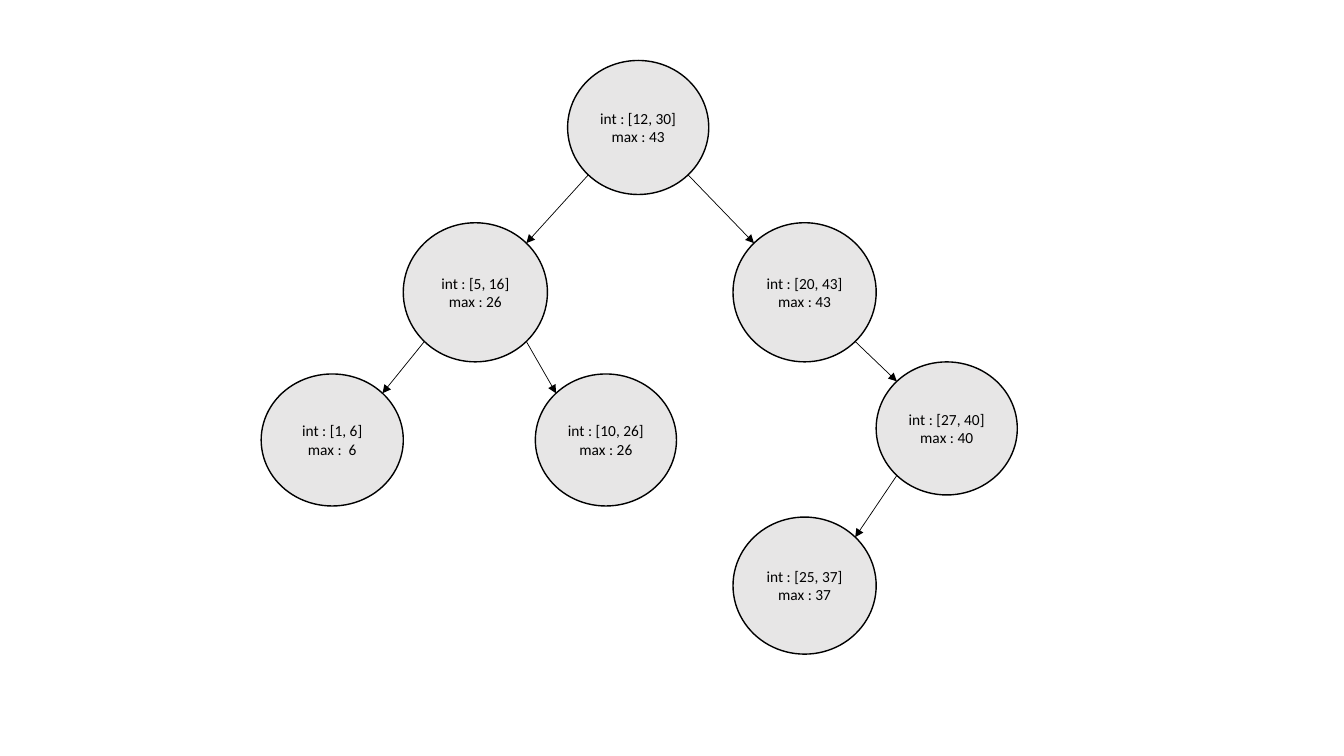
"""Draw an interval tree whose nodes hold an interval and a subtree maximum."""
from math import sqrt

from pptx import Presentation
from pptx.dml.color import RGBColor
from pptx.enum.shapes import MSO_CONNECTOR as Connector, MSO_SHAPE as Shape
from pptx.enum.text import MSO_ANCHOR as Anchor, PP_ALIGN as Align
from pptx.oxml.ns import qn
from pptx.util import Pt
from lxml.etree import SubElement

PX = 9144
SLIDE_SIZE = (1333, 750)
BLACK, GRAY = "000000", "E7E6E6"
FONT = {"name": "Calibri", "size": Pt(11)}
FRAME = {"word_wrap": True, "vertical_anchor": Anchor.MIDDLE,
         "margin_left": 0, "margin_right": 0}

NODES = {
    "root": ((563, 60, 140, 133), "int : [12, 30]", "max : 43"),
    "left": ((400, 221, 143, 138), "int : [5, 16]", "max : 26"),
    "right": ((727, 221, 142, 138), "int : [20, 43]", "max : 43"),
    "left_left": ((259, 371, 141, 131), "int : [1, 6]", "max :  6"),
    "left_right": ((531, 371, 140, 131), "int : [10, 26]", "max : 26"),
    "right_right": ((869, 359, 140, 132), "int : [27, 40]", "max : 40"),
    "right_right_left": ((727, 513, 142, 136), "int : [25, 37]", "max : 37"),
}
EDGES = [
    ("root", "right"),
    ("root", "left"),
    ("left", "left_left"),
    ("left", "left_right"),
    ("right", "right_right"),
    ("right_right", "right_right_left"),
]


def color(value):
    return RGBColor.from_string(value)


def emu(*lengths):
    return [round(length * PX) for length in lengths]


def set_values(target, values):
    for name, value in values.items():
        setattr(target, name, value)


def set_line(line, width):
    line.color.rgb = color(BLACK)
    line.width = Pt(width)


def add_node(slide, box, lines):
    shape = slide.shapes.add_shape(Shape.OVAL, *emu(*box))
    shape.shadow.inherit = False
    shape.fill.solid()
    shape.fill.fore_color.rgb = color(GRAY)
    set_line(shape.line, 1)
    frame = shape.text_frame
    set_values(frame, FRAME)
    frame.text = "\n".join(lines)
    for paragraph in frame.paragraphs:
        paragraph.alignment = Align.CENTER
        font = paragraph.runs[0].font
        set_values(font, FONT)
        font.color.rgb = color(BLACK)


def diagonal_point(box, across, down):
    left, top, width, height = box
    reach = 1 / sqrt(2)
    return (left + width / 2 * (1 + across * reach),
            top + height / 2 * (1 + down * reach))


def add_edge(slide, parent, child):
    across = 1 if child[0] + child[2] / 2 > parent[0] + parent[2] / 2 else -1
    start = diagonal_point(parent, across, 1)
    end = diagonal_point(child, -across, -1)
    connector = slide.shapes.add_connector(Connector.STRAIGHT, *emu(*start, *end))
    set_line(connector.line, 0.5)
    properties = connector._element.spPr
    SubElement(properties.find(qn("a:ln")), qn("a:tailEnd"), type="triangle")
    SubElement(properties, qn("a:effectLst"))


def main():
    presentation = Presentation()
    presentation.slide_width, presentation.slide_height = emu(*SLIDE_SIZE)
    slide = presentation.slides.add_slide(presentation.slide_layouts[6])
    for box, *lines in NODES.values():
        add_node(slide, box, lines)
    for parent, child in EDGES:
        add_edge(slide, NODES[parent][0], NODES[child][0])
    presentation.save("out.pptx")


if __name__ == "__main__":
    main()
